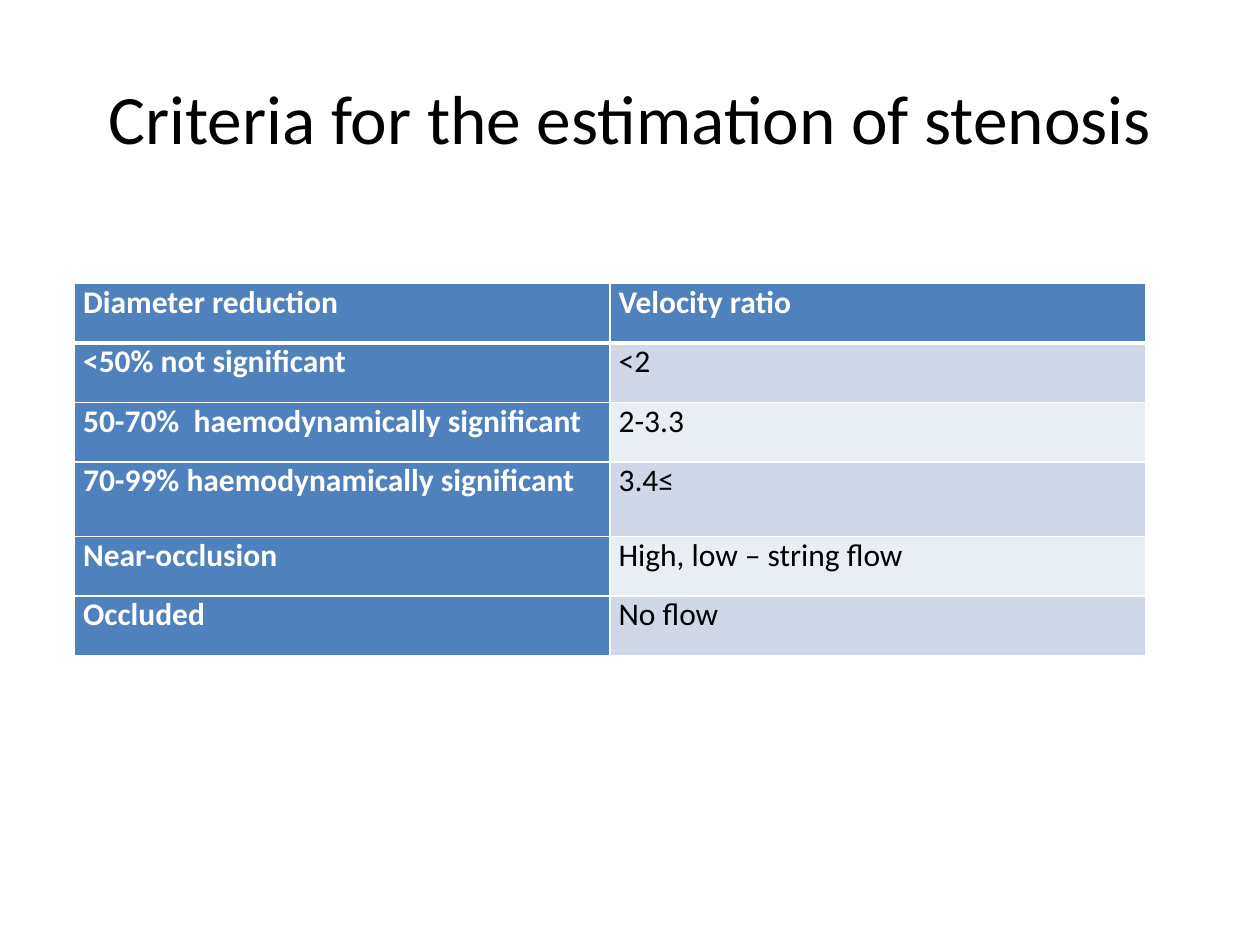
from lxml import etree
from pptx import Presentation
from pptx.dml.color import RGBColor
from pptx.enum.text import MSO_ANCHOR, PP_ALIGN
from pptx.oxml.ns import qn
from pptx.util import Pt

CENTER, JUSTIFY, LEFT = PP_ALIGN.CENTER, PP_ALIGN.JUSTIFY, PP_ALIGN.LEFT
MIDDLE, TOP = MSO_ANCHOR.MIDDLE, MSO_ANCHOR.TOP

BLACK = RGBColor(0x00, 0x00, 0x00)
WHITE = RGBColor(0xFF, 0xFF, 0xFF)
BLUE = RGBColor(0x4F, 0x81, 0xBD)
BAND_DARK = RGBColor(0xD0, 0xD8, 0xE8)
BAND_LIGHT = RGBColor(0xE9, 0xED, 0xF4)

FONT = "Calibri"
TITLE_ONLY = 5
COLUMN_WIDTH = 306
ROW_HEIGHTS = [34, 34, 34, 42.5, 34, 34]
CRITERIA = [
    ("Diameter reduction", "Velocity ratio"),
    ("<50% not significant", "<2"),
    ("50-70%  haemodynamically significant", "2-3.3"),
    ("70-99% haemodynamically significant", "3.4≤"),
    ("Near-occlusion", "High, low – string flow"),
    ("Occluded", "No flow"),
]
LEFT_ALIGNED_ROW = 2


def apply_format(target, values):
    for name, value in values.items():
        setattr(target, name, value)


def write_text(frame, text, align, size, color, bold=False):
    para = frame.paragraphs[0]
    para.alignment = align
    span = para.add_run()
    span.text = text
    apply_format(span.font, {"name": FONT, "size": Pt(size), "bold": bold})
    span.font.color.rgb = color


def add_title(page, text):
    title = page.shapes.title
    apply_format(title, {"left": Pt(36), "top": Pt(21.6),
                         "width": Pt(648), "height": Pt(90)})
    title.text_frame.vertical_anchor = MIDDLE
    write_text(title.text_frame, text, CENTER, 39.6, BLACK)


def set_borders(cell, widths):
    """Draw white borders; widths maps each side (L, R, T, B) to points."""
    properties = cell._tc.get_or_add_tcPr()
    for side, width in widths.items():
        line = etree.SubElement(properties, qn(f"a:ln{side}"), w=str(Pt(width)))
        fill = etree.SubElement(line, qn("a:solidFill"))
        etree.SubElement(fill, qn("a:srgbClr"), val=str(WHITE))


def format_cell(cell, row, column):
    is_heading = row == 0 or column == 0
    band = BAND_DARK if row % 2 else BAND_LIGHT
    apply_format(cell, {"margin_left": Pt(5), "margin_right": Pt(5),
                        "margin_top": 0, "margin_bottom": 0,
                        "vertical_anchor": TOP})
    set_borders(cell, {"L": 1, "R": 1, "T": 3 if row == 1 else 1,
                       "B": 3 if row == 0 else 1})
    cell.fill.solid()
    cell.fill.fore_color.rgb = BLUE if is_heading else band
    align = LEFT if (row, column) == (LEFT_ALIGNED_ROW, 0) else JUSTIFY
    write_text(cell.text_frame, CRITERIA[row][column], align, 18,
               WHITE if is_heading else BLACK, is_heading)


def add_criteria_table(page):
    columns = len(CRITERIA[0])
    table = page.shapes.add_table(
        len(CRITERIA), columns, Pt(42.5), Pt(162),
        Pt(columns * COLUMN_WIDTH), Pt(sum(ROW_HEIGHTS))).table
    table.first_col = True
    for column in table.columns:
        column.width = Pt(COLUMN_WIDTH)
    for row, height in enumerate(ROW_HEIGHTS):
        table.rows[row].height = Pt(height)
        for column in range(columns):
            format_cell(table.cell(row, column), row, column)


def main():
    deck = Presentation()
    deck.slide_width, deck.slide_height = Pt(720), Pt(540)
    page = deck.slides.add_slide(deck.slide_layouts[TITLE_ONLY])
    add_title(page, "Criteria for the estimation of stenosis")
    add_criteria_table(page)
    deck.save("out.pptx")


if __name__ == "__main__":
    main()
